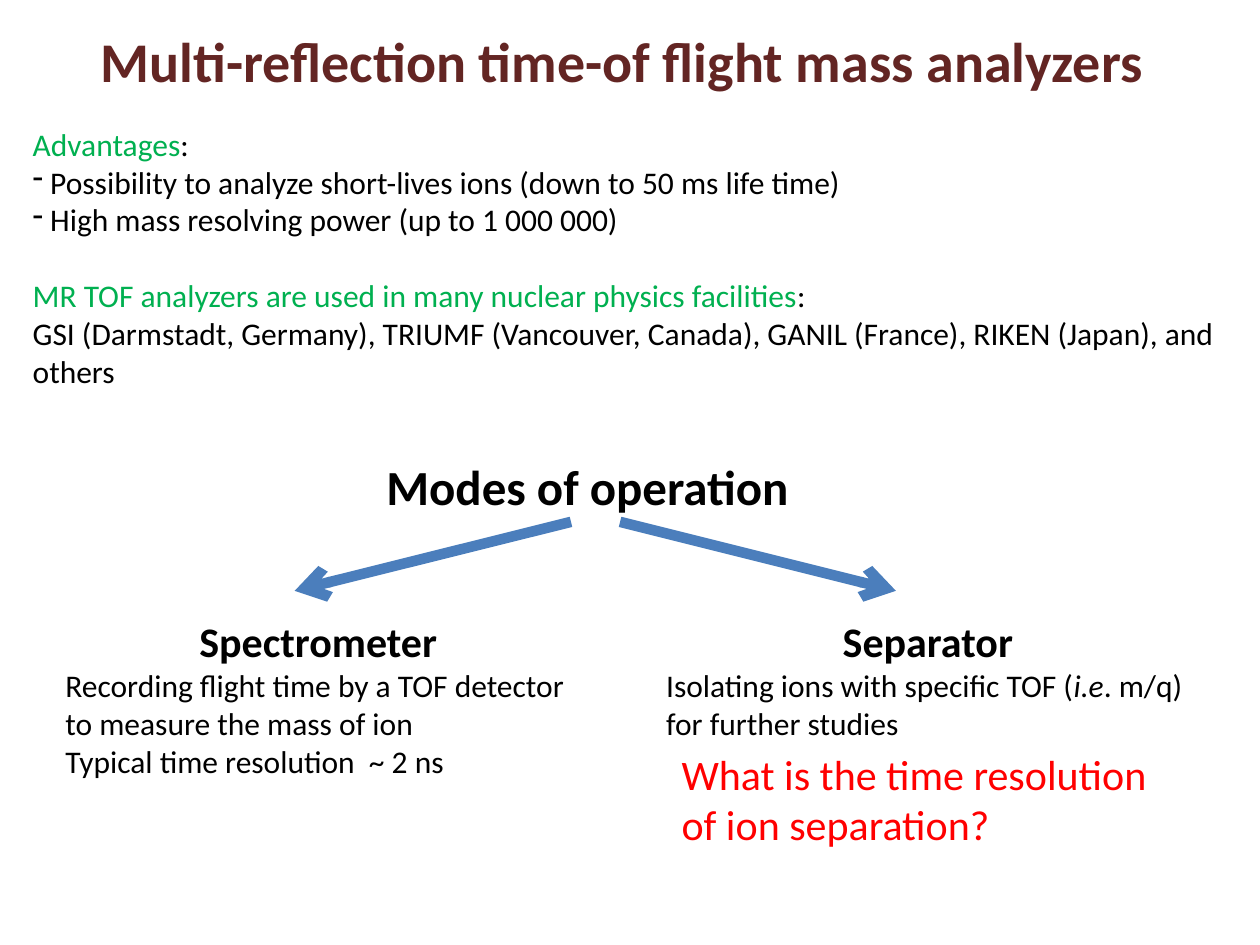
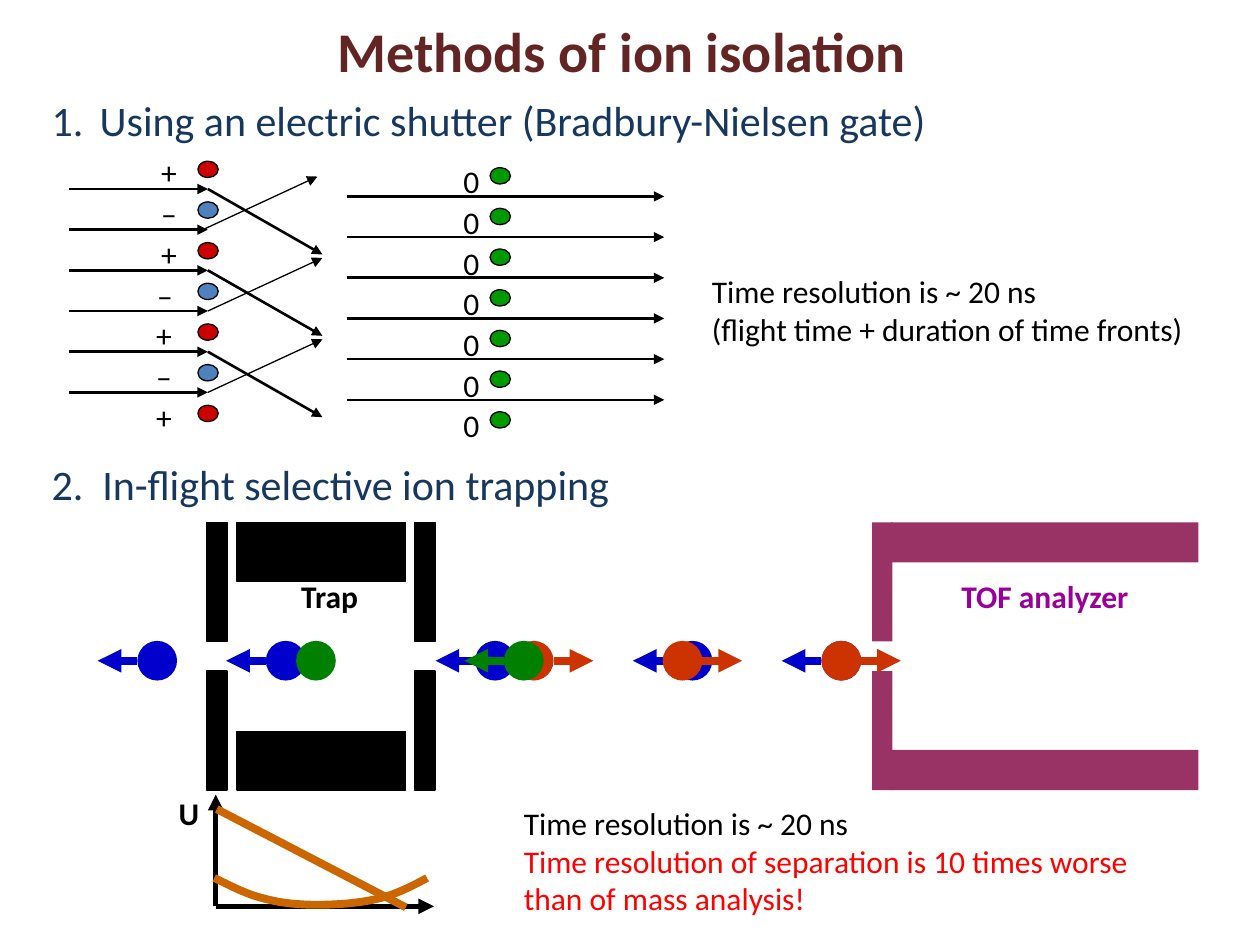
from lxml.etree import SubElement
from pptx import Presentation
from pptx.dml.color import RGBColor
from pptx.enum.shapes import MSO_CONNECTOR, MSO_SHAPE
from pptx.enum.text import MSO_ANCHOR, MSO_AUTO_SIZE, PP_ALIGN
from pptx.oxml.ns import qn
from pptx.util import Cm, Pt

FONT = "Calibri"
BLACK = RGBColor(0x00, 0x00, 0x00)
MAROON = RGBColor(0x63, 0x25, 0x23)
NAVY = RGBColor(0x17, 0x37, 0x5E)
GREEN = RGBColor(0x00, 0xB0, 0x50)
RED = RGBColor(0xFF, 0x00, 0x00)
ARROW_BLUE = RGBColor(0x4B, 0x7E, 0xBC)
PLUS_RED = RGBColor(0xCC, 0x00, 0x00)
MINUS_BLUE = RGBColor(0x4F, 0x81, 0xBD)
ZERO_GREEN = RGBColor(0x00, 0x99, 0x00)
ION_BLUE = RGBColor(0x00, 0x00, 0xCC)
ION_RED = RGBColor(0xCC, 0x33, 0x00)
ION_GREEN = RGBColor(0x00, 0x80, 0x00)
PLUM = RGBColor(0x99, 0x33, 0x66)
PURPLE = RGBColor(0x99, 0x00, 0x99)
ORANGE = RGBColor(0xCC, 0x66, 0x00)

# Content: a paragraph is (runs, paragraph format), a run is (text, run format)
OVERVIEW_TITLE = ("Multi-reflection time-of flight mass analyzers", (1.78, 0.41, 21.77, 1.63))
ISOLATION_TITLE = ("Methods of ion isolation", (6.55, 0.2, 12.09, 1.63))


def plain(text, **run_format):
    return [(text, run_format)], {}


def heading(text):
    return [(text, {"size": 24, "bold": True})], {"align": PP_ALIGN.CENTER}


OVERVIEW = [
    ([("Advantages", {"color": GREEN}), (":", {})], {}),
    ([(" Possibility to analyze short-lives ions (down to 50 ms life time)", {})], {"bullet": "-"}),
    ([(" High mass resolving power (up to 1 000 000)", {})], {"bullet": "-"}),
    ([("MR TOF analyzers are used in many nuclear physics facilities", {"color": GREEN}),
      (":", {})], {"space_before": 21.7}),
    plain("GSI (Darmstadt, Germany), TRIUMF (Vancouver, Canada), GANIL (France), "
          "RIKEN (Japan), and others"),
]
SPECTROMETER = [
    heading("Spectrometer"),
    plain("Recording flight time by a TOF detector"),
    plain("to measure the mass of ion"),
    plain("Typical time resolution  ~ 2 ns"),
]
SEPARATOR = [
    heading("Separator"),
    ([("Isolating ions with specific TOF (", {}), ("i.e", {"italic": True}), (". m/q)", {})], {}),
    plain("for further studies"),
]
QUESTION = [plain("What is the time resolution"), plain("of ion separation?")]
MODE_ARROWS = [((11.51, 10.52), (5.94, 11.91)), ((12.5, 10.52), (18.06, 11.91))]

SHUTTER = [([("Using an electric shutter (Bradbury-Nielsen gate)", {})],
            {"number": "arabicPeriod", "hanging": 0.97})]
TRAPPING = [([("2.  In-flight selective ion trapping", {})], {"hanging": 0.97})]
SHUTTER_NOTE = [plain("Time resolution is ~ 20 ns"),
                plain("(flight time + duration of time fronts)")]
TRAPPING_NOTE = [
    plain("Time resolution is ~ 20 ns"),
    plain("Time resolution of separation is 10 times worse", color=RED),
    plain("than of mass analysis!", color=RED),
]
# Sign and left edge of its label, one per wire
WIRES = [("+", 3.0), ("–", 3.0), ("+", 3.0), ("–", 2.92), ("+", 2.9), ("–", 2.9), ("+", 2.9)]
WIRE_PITCH = 0.82
# Left edge, colour and flight direction of each ion, back to front
IONS = [
    (16.56, ION_BLUE, -1), (10.36, ION_RED, 1), (9.58, ION_BLUE, -1),
    (10.16, ION_GREEN, -1), (13.56, ION_BLUE, -1), (13.36, ION_RED, 1),
    (5.36, ION_BLUE, -1), (2.77, ION_BLUE, -1), (5.97, ION_GREEN, 0),
    (16.56, ION_RED, 1),
]
ION_SIZE, ION_AXIS = 0.8, 13.32
HOUSING_TOP, HOUSING_BOTTOM, WALL_HEIGHT, WALL_WIDTH = 10.53, 15.93, 2.4, 0.41
POTENTIAL_ORIGIN = (4.35, 18.27)
POTENTIAL_CURVE = [  # Bezier segments that share their end points
    (4.32, 17.7), (4.5, 17.78), (4.95, 18.03), (5.31, 18.11), (5.66, 18.21),
    (6.02, 18.24), (6.4, 18.24), (6.78, 18.24), (7.26, 18.21), (7.65, 18.11),
    (8.0, 18.03), (8.41, 17.81), (8.61, 17.7),
]


# Text helpers
def format_paragraph(paragraph, align=PP_ALIGN.LEFT, space_before=0,
                     bullet=None, number=None, hanging=0):
    paragraph.alignment = align
    paragraph.space_before = Pt(space_before)
    properties = paragraph._p.get_or_add_pPr()
    properties.set("marL", str(Cm(hanging)))
    properties.set("indent", str(-Cm(hanging)))
    if bullet:
        SubElement(properties, qn("a:buChar")).set("char", bullet)
    elif number:
        SubElement(properties, qn("a:buAutoNum")).set("type", number)
    else:
        SubElement(properties, qn("a:buNone"))


def fill_text(shape, paragraphs, wrap=False, **base_format):
    frame = shape.text_frame
    frame.word_wrap = wrap
    frame.auto_size = MSO_AUTO_SIZE.SHAPE_TO_FIT_TEXT
    frame.vertical_anchor = MSO_ANCHOR.TOP
    for index, (runs, paragraph_format) in enumerate(paragraphs):
        paragraph = frame.add_paragraph() if index else frame.paragraphs[0]
        format_paragraph(paragraph, **paragraph_format)
        for text, run_format in runs:
            style = {"size": 18, "color": BLACK, **base_format, **run_format}
            run = paragraph.add_run()
            run.text = text
            run.font.name = FONT
            run.font.size = Pt(style["size"])
            run.font.bold = style.get("bold", False)
            run.font.italic = style.get("italic", False)
            run.font.color.rgb = style["color"]


def add_text(slide, box, paragraphs, **text_format):
    if isinstance(paragraphs, str):
        paragraphs = [plain(paragraphs)]
    fill_text(slide.shapes.add_textbox(*map(Cm, box)), paragraphs, **text_format)


def add_titled_slide(presentation, title, box):
    slide = presentation.slides.add_slide(presentation.slide_layouts[5])
    shape = slide.shapes.title
    shape.left, shape.top, shape.width, shape.height = map(Cm, box)
    fill_text(shape, [plain(title)], size=32, bold=True, color=MAROON)
    return slide


# Drawing helpers
def add_filled(slide, kind, box, fill, outlined=False):
    shape = slide.shapes.add_shape(kind, *map(Cm, box))
    shape.shadow.inherit = False
    shape.fill.solid()
    shape.fill.fore_color.rgb = fill
    if outlined:
        shape.line.color.rgb = BLACK
        shape.line.width = Pt(0.75)
    else:
        shape.line.fill.background()


def add_line(slide, start, end, color=BLACK, width=1.5, head="triangle"):
    connector = slide.shapes.add_connector(MSO_CONNECTOR.STRAIGHT, *map(Cm, (*start, *end)))
    connector.line.color.rgb = color
    connector.line.width = Pt(width)
    if head:
        SubElement(connector.line._get_or_add_ln(), qn("a:tailEnd")).set("type", head)
    SubElement(connector._element.spPr, qn("a:effectLst"))


def add_curve(slide, points, color, width, steps=10):
    samples = [points[0]]
    for first in range(0, len(points) - 1, 3):
        segment = points[first:first + 4]
        for step in range(1, steps + 1):
            t = step / steps
            weights = ((1 - t) ** 3, 3 * t * (1 - t) ** 2, 3 * t * t * (1 - t), t ** 3)
            samples.append(tuple(sum(w * point[axis] for w, point in zip(weights, segment))
                                 for axis in (0, 1)))
    samples = [(Cm(x), Cm(y)) for x, y in samples]
    builder = slide.shapes.build_freeform(*samples[0])
    builder.add_line_segments(samples[1:], close=False)
    shape = builder.convert_to_shape()
    shape.shadow.inherit = False
    shape.fill.background()
    shape.line.color.rgb = color
    shape.line.width = Pt(width)


def add_housing(slide, walls, plate_left, plate_width, plate_height, fill, outlined=False):
    for left in walls:
        for top in (HOUSING_TOP, HOUSING_BOTTOM - WALL_HEIGHT):
            add_filled(slide, MSO_SHAPE.RECTANGLE, (left, top, WALL_WIDTH, WALL_HEIGHT),
                       fill, outlined)
    for top in (HOUSING_TOP, HOUSING_BOTTOM - plate_height):
        add_filled(slide, MSO_SHAPE.RECTANGLE, (plate_left, top, plate_width, plate_height),
                   fill, outlined)


# Slides
def build_overview(presentation):
    slide = add_titled_slide(presentation, *OVERVIEW_TITLE)
    add_text(slide, (7.54, 9.07, 8.71, 1.45), "Modes of operation", size=28, bold=True)
    add_text(slide, (0.41, 2.39, 24.61, 5.64), OVERVIEW, wrap=True)
    for start, end in MODE_ARROWS:
        add_line(slide, start, end, ARROW_BLUE, 6, "arrow")
    add_text(slide, (1.07, 12.29, 10.69, 3.58), SPECTROMETER)
    add_text(slide, (13.18, 12.29, 11.05, 2.82), SEPARATOR)
    add_text(slide, (13.49, 14.96, 10.19, 2.31), QUESTION, size=24, color=RED)


def draw_shutter(slide):
    for row, (sign, label_left) in enumerate(WIRES):
        shift = row * WIRE_PITCH
        positive = sign == "+"
        # Closed gate on the left, open gate on the right
        add_filled(slide, MSO_SHAPE.OVAL, (3.99, 3.25 + shift, 0.41, 0.33),
                   PLUS_RED if positive else MINUS_BLUE, outlined=True)
        add_filled(slide, MSO_SHAPE.OVAL, (9.88, 3.38 + shift, 0.41, 0.33),
                   ZERO_GREEN, outlined=True)
        add_text(slide, (label_left, 2.97 + shift, 0.88, 0.84), sign)
        add_text(slide, (9.09, 3.15 + shift, 0.86, 0.84), "0")
        if row == len(WIRES) - 1:
            break
        beam = 3.81 + shift
        add_line(slide, (1.4, beam), (4.19, beam))
        add_line(slide, (6.99, beam + 0.15), (13.39, beam + 0.15))
        # Ions are deflected towards the neighbouring gap
        start = 4.09 if row == 1 else 4.19
        add_line(slide, (start, beam), (start + 2.31, beam + (1.32 if positive else -1.07)),
                 width=1.5 if positive else 0.75)


def draw_trapping(slide):
    add_housing(slide, (4.17, 8.36), 4.78, 3.4, 1.19, BLACK, outlined=True)
    add_housing(slide, (17.58,), 17.96, 6.2, 0.81, PLUM)
    for left, color, direction in IONS:
        add_filled(slide, MSO_SHAPE.OVAL,
                   (left, ION_AXIS - ION_SIZE / 2, ION_SIZE, ION_SIZE), color)
        if direction:
            edge = left + (ION_SIZE if direction > 0 else 0)
            add_line(slide, (edge, ION_AXIS), (edge + direction * ION_SIZE, ION_AXIS), color, 4.5)
    add_text(slide, (5.82, 11.51, 1.68, 1.02), "Trap", bold=True)
    add_text(slide, (19.13, 11.51, 3.91, 1.02), "TOF analyzer", bold=True, color=PURPLE)


def draw_potential(slide):
    x, y = POTENTIAL_ORIGIN
    for end in ((x, 16.02), (8.75, y)):
        add_line(slide, POTENTIAL_ORIGIN, end, width=3)
    add_text(slide, (3.35, 15.88, 0.97, 0.71), "U", bold=True)
    add_line(slide, (4.37, 16.31), (8.18, 18.29), ORANGE, 4.5, head=None)
    add_curve(slide, POTENTIAL_CURVE, ORANGE, 4.5)


def build_isolation(presentation):
    slide = add_titled_slide(presentation, *ISOLATION_TITLE)
    add_text(slide, (0.79, 1.78, 18.69, 1.27), SHUTTER, size=24, color=NAVY)
    draw_shutter(slide)
    add_text(slide, (14.1, 5.36, 10.39, 1.8), SHUTTER_NOTE)
    add_text(slide, (0.79, 9.12, 11.86, 1.27), TRAPPING, size=24, color=NAVY)
    draw_trapping(slide)
    draw_potential(slide)
    add_text(slide, (10.31, 16.08, 12.98, 2.57), TRAPPING_NOTE)


def main():
    presentation = Presentation()
    presentation.slide_width, presentation.slide_height = Cm(25.4), Cm(19.05)
    build_overview(presentation)
    build_isolation(presentation)
    presentation.save("out.pptx")


if __name__ == "__main__":
    main()
